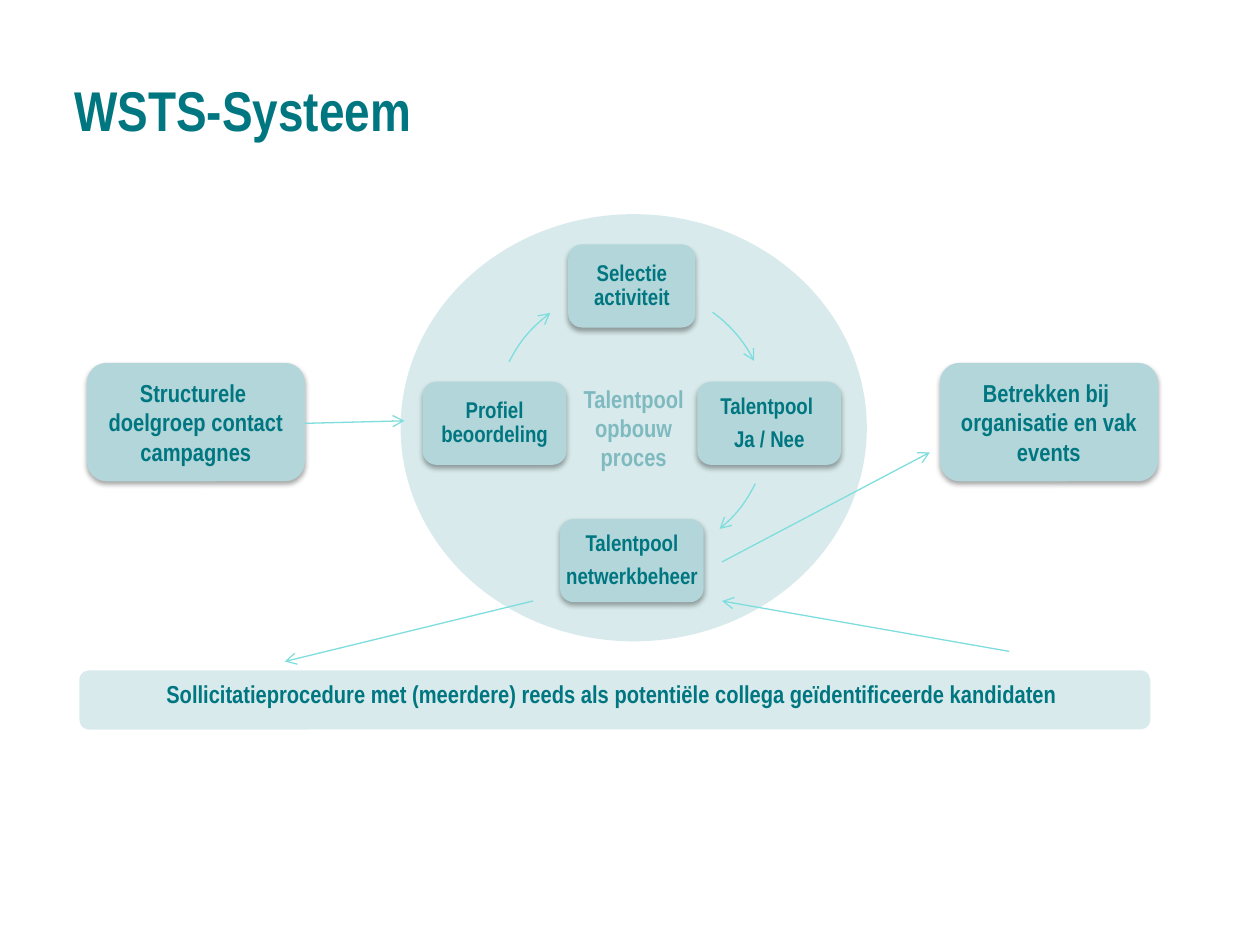
from dataclasses import dataclass

from lxml import etree
from pptx import Presentation
from pptx.dml.color import RGBColor
from pptx.enum.shapes import MSO_CONNECTOR, MSO_SHAPE
from pptx.enum.text import MSO_ANCHOR, PP_ALIGN
from pptx.oxml.ns import qn
from pptx.util import Emu, Inches, Pt

ROUND, OVAL, ARC = MSO_SHAPE.ROUNDED_RECTANGLE, MSO_SHAPE.OVAL, MSO_SHAPE.ARC
STRAIGHT = MSO_CONNECTOR.STRAIGHT
TOP, MIDDLE = MSO_ANCHOR.TOP, MSO_ANCHOR.MIDDLE
LEFT, CENTER = PP_ALIGN.LEFT, PP_ALIGN.CENTER

FONT = "Arial Narrow"
COLORS = {"text": "007681", "muted": "7FBAC0", "box": "B2D6D9",
          "arrow": "7EDDDD", "shadow": "000000"}

# Grid of 100 columns by 75 rows
W, H = Inches(10), Inches(7.5)
COL, ROW = W / 100, H / 75

# Process ring: centre and radius in grid units
RING_X, RING_Y, RING_R = 50.15, 33.6, 10.9


@dataclass
class Box:
    x: float
    y: float
    w: float
    h: float


@dataclass
class TextStyle:
    size: float = 14
    color: str = "text"
    align: PP_ALIGN = CENTER
    anchor: MSO_ANCHOR = MIDDLE
    margins: tuple[float, float] = (0.05, 0.05)  # sides, top and bottom
    line_spacing: float | Pt | None = None
    space_after: float = 0


@dataclass
class Node:
    dx: int  # direction from the ring centre
    dy: int
    w: float
    text: str
    side_margin: float = 0


@dataclass
class Arrow:
    x1: float
    y1: float
    x2: float
    y2: float


NODES = [
    Node(0, -1, 10.1, "Selectie activiteit", 0.05),
    Node(1, 0, 11.4, "Talentpool \nJa / Nee"),
    Node(0, 1, 11.4, "Talentpool\nnetwerkbeheer"),
    Node(-1, 0, 11.4, "Profiel beoordeling"),
]
NODE_H = 6.6
NODE_SPACING = dict(size=13, line_spacing=0.9, space_after=5)
ARCS = [(306, 333), (26, 50.3), (206.6, 233.5)]  # degrees, clockwise
SIDES = [
    (6.9, "Structurele \ndoelgroep contact\ncampagnes"),
    (74.6, "Betrekken bij \norganisatie en vak events"),
]
ARROWS = [
    Arrow(42.3, 47.7, 22.6, 52.5),
    Arrow(80.1, 51.7, 57.3, 47.7),
    Arrow(24.2, 33.6, 32.1, 33.4),
    Arrow(57.3, 44.6, 73.8, 35.9),
]


def rgb(name: str) -> RGBColor:
    return RGBColor.from_string(COLORS[name])


def place(b: Box) -> tuple[Emu, ...]:
    return Emu(int(b.x * COL)), Emu(int(b.y * ROW)), Emu(int(b.w * COL)), Emu(int(b.h * ROW))


def write(sp, text: str, style: TextStyle) -> None:
    tf = sp.text_frame
    tf.word_wrap = True
    tf.vertical_anchor = style.anchor
    tf.margin_left = tf.margin_right = Inches(style.margins[0])
    tf.margin_top = tf.margin_bottom = Inches(style.margins[1])
    tf.text = text
    for p in tf.paragraphs:
        p.alignment = style.align
        if style.line_spacing:
            p.line_spacing = style.line_spacing
        p.space_after = Pt(style.space_after)
        for r in p.runs:
            r.font.name, r.font.size, r.font.bold = FONT, Pt(style.size), True
            r.font.color.rgb = rgb(style.color)


def add_shadow(sp) -> None:
    effects = sp._element.spPr.find(qn("a:effectLst"))
    outer = etree.SubElement(effects, qn("a:outerShdw"), blurRad=str(Pt(3.1)),
                             dist=str(Pt(1.8)), dir="5400000", rotWithShape="0")
    color = etree.SubElement(outer, qn("a:srgbClr"), val=COLORS["shadow"])
    etree.SubElement(color, qn("a:alpha"), val="35000")


def add_box(s, kind: MSO_SHAPE, b: Box, text: str, style: TextStyle,
            raised: bool = True) -> None:
    """A raised box is opaque with a shadow; a flat one is half transparent."""
    sp = s.shapes.add_shape(kind, *place(b))
    sp.shadow.inherit = False
    sp.fill.solid()
    sp.fill.fore_color.rgb = rgb("box")
    sp.line.fill.background()
    if raised:
        add_shadow(sp)
    else:
        color = sp._element.spPr.find(f"{qn('a:solidFill')}/{qn('a:srgbClr')}")
        etree.SubElement(color, qn("a:alpha"), val="50000")
    write(sp, text, style)


def style_arrow(sp) -> None:
    sp.line.color.rgb = rgb("arrow")
    sp.line.width = Pt(0.75)
    etree.SubElement(sp.line._get_or_add_ln(), qn("a:tailEnd"), type="arrow")


def add_arc(s, start: float, end: float) -> None:
    sp = s.shapes.add_shape(ARC, *place(
        Box(RING_X - RING_R, RING_Y - RING_R, 2 * RING_R, 2 * RING_R)))
    sp.shadow.inherit = False
    sp.fill.background()
    for i, degrees in enumerate((start, end)):
        sp.adjustments[i] = degrees * 0.6  # 60000 units a degree, over 100000
    style_arrow(sp)


def add_arrow(s, a: Arrow) -> None:
    cx = s.shapes.add_connector(STRAIGHT, int(a.x1 * COL), int(a.y1 * ROW),
                                int(a.x2 * COL), int(a.y2 * ROW))
    style_arrow(cx)
    etree.SubElement(cx._element.spPr, qn("a:effectLst"))


def main() -> None:
    prs = Presentation()
    prs.slide_width, prs.slide_height = W, H
    s = prs.slides.add_slide(prs.slide_layouts[6])

    # Title
    title = s.shapes.add_textbox(*place(Box(5.9, 6, 70.1, 5.8)))
    write(title, "WSTS-Systeem",
          TextStyle(size=32, align=LEFT, margins=(0, 0), line_spacing=Pt(35)))

    # Talent pool circle with its ring of steps
    add_box(s, OVAL, Box(31.8, 17, 37, 33.9), "Talentpool\nopbouw\nproces",
            TextStyle(color="muted"), raised=False)
    for n in NODES:
        box = Box(RING_X + n.dx * RING_R - n.w / 2,
                  RING_Y + n.dy * RING_R - NODE_H / 2, n.w, NODE_H)
        add_box(s, ROUND, box, n.text,
                TextStyle(margins=(n.side_margin, 0.05), **NODE_SPACING))
    for start, end in ARCS:
        add_arc(s, start, end)

    # Boxes on both sides
    for x, text in SIDES:
        add_box(s, ROUND, Box(x, 28.8, 17.3, 9.4), text, TextStyle())

    # Application bar
    add_box(s, ROUND, Box(6.3, 53.2, 85, 4.7),
            "Sollicitatieprocedure met (meerdere) reeds als potentiële collega "
            "geïdentificeerde kandidaten ", TextStyle(anchor=TOP), raised=False)

    for arrow in ARROWS:
        add_arrow(s, arrow)

    prs.save("out.pptx")


if __name__ == "__main__":
    main()
